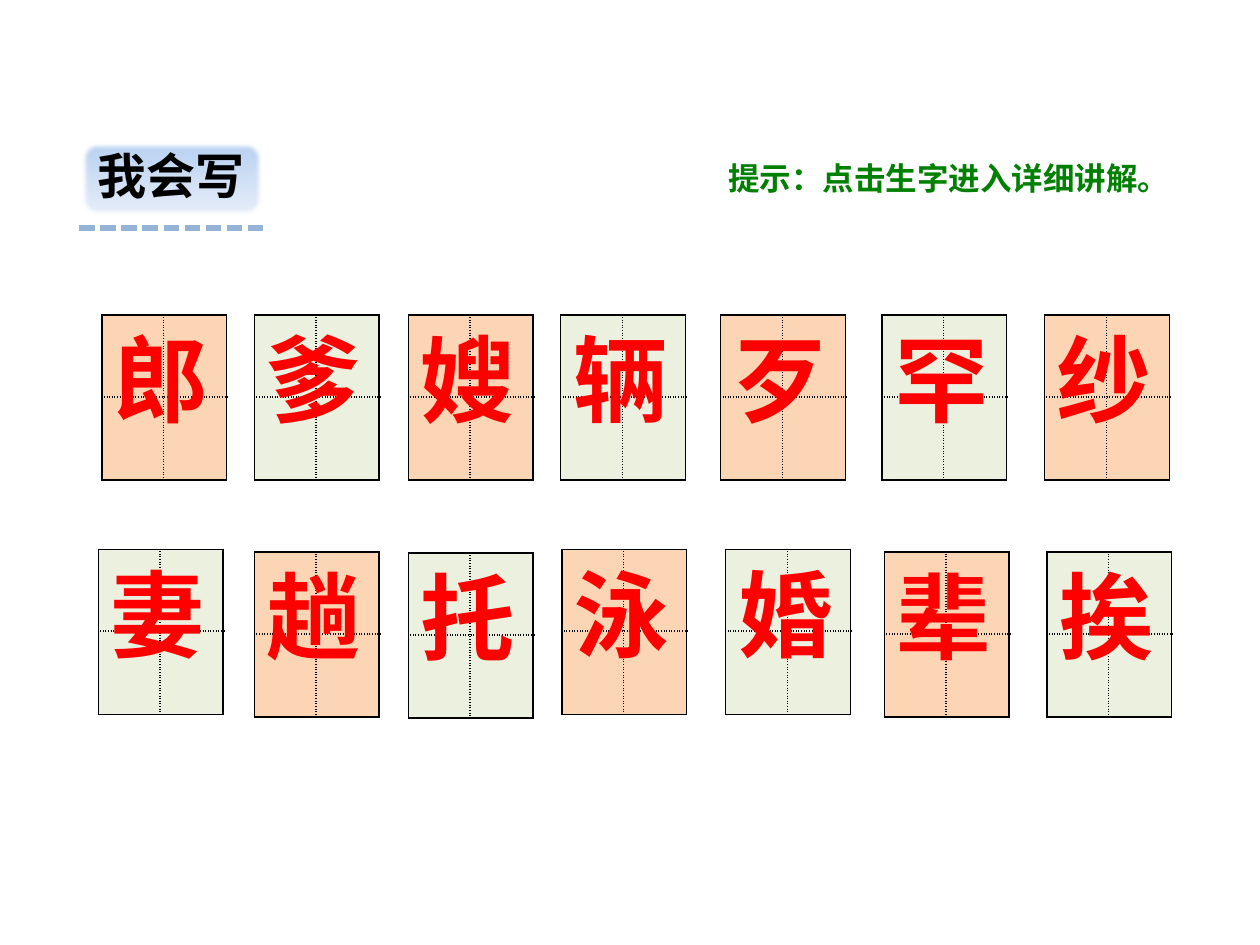
import pptx
import pptx.dml.color
import pptx.enum.dml
import pptx.enum.shapes
import pptx.enum.text
import pptx.oxml
import pptx.oxml.ns
import pptx.util

Inches = pptx.util.Inches
Pt = pptx.util.Pt

TITLE = "我会写"
HINT = [("提示", "cjk"), ("：", "latin"), ("点击生字进入详细讲解。", "cjk")]
CHARACTER_ROWS = [
    [("郎", 0.81, 2.5), ("爹", 2.02, 2.5), ("嫂", 3.24, 2.5), ("辆", 4.45, 2.5),
     ("歹", 5.72, 2.5), ("罕", 7.0, 2.5), ("纱", 8.29, 2.5)],
    [("妻", 0.78, 4.36), ("趟", 2.02, 4.38), ("托", 3.24, 4.39), ("泳", 4.46, 4.36),
     ("婚", 5.76, 4.36), ("辈", 7.02, 4.38), ("挨", 8.31, 4.38)],
]
CARD_COLUMNS = (0.49, 0.5)
CARD_ROWS = (0.65, 0.66)

THEME = {
    "cjk": "Noto Sans CJK SC", "latin": "Calibri",
    "title": "000000", "hint": "008000", "character": "FF0000",
    "outline": "FFFFFF", "border": "000000", "dash": "95B3D7",
    "cards": ("FCD5B5", "EBF1DE"),
    "badge": ("B7D0F1", "E8EFFA"),
    "title_size": 28, "hint_size": 18, "character_size": 54,
}


def color(value):
    return pptx.dml.color.RGBColor.from_string(value)


def xml(tag, attributes="", content=""):
    namespace = pptx.oxml.ns.nsdecls("a")
    return pptx.oxml.parse_xml(f"<a:{tag} {namespace} {attributes}>{content}</a:{tag}>")


def solid(value):
    return f'<a:solidFill><a:srgbClr val="{value}"/></a:solidFill>'


def format_run(run, role, face="cjk"):
    run.font.name = THEME[face]
    run.font.size = Pt(THEME[role + "_size"])
    run.font.bold = True
    run.font.color.rgb = color(THEME[role])
    run.font._element.find(pptx.oxml.ns.qn("a:latin")).addnext(
        xml("ea", f'typeface="{THEME[face]}"'))


def fit_without_wrap(text_frame):
    text_frame.word_wrap = False
    text_frame.auto_size = pptx.enum.text.MSO_AUTO_SIZE.SHAPE_TO_FIT_TEXT


def add_title(slide):
    badge = slide.shapes.add_shape(
        pptx.enum.shapes.MSO_SHAPE.ROUNDED_RECTANGLE,
        Inches(0.65), Inches(1.13), Inches(1.43), Inches(0.58))
    badge.fill.gradient()
    badge.fill.gradient_angle = 270
    for stop, value in zip(badge.fill.gradient_stops, THEME["badge"]):
        stop.color.rgb = color(value)
    for stop, position in zip(badge.fill.gradient_stops, (0, 1)):
        stop.position = position
    badge.line.fill.background()
    badge._element.spPr.append(xml("effectLst", content='<a:softEdge rad="31750"/>'))
    text_frame = badge.text_frame
    text_frame.text = TITLE
    fit_without_wrap(text_frame)
    text_frame.vertical_anchor = pptx.enum.text.MSO_ANCHOR.TOP
    paragraph = text_frame.paragraphs[0]
    paragraph.alignment = pptx.enum.text.PP_ALIGN.LEFT
    paragraph.line_spacing = 0.9
    format_run(paragraph.runs[0], "title")

    underline = slide.shapes.add_connector(
        pptx.enum.shapes.MSO_CONNECTOR.STRAIGHT,
        Inches(0.63), Inches(1.81), Inches(2.09), Inches(1.81))
    underline.line.color.rgb = color(THEME["dash"])
    underline.line.width = Pt(3)
    underline.line.dash_style = pptx.enum.dml.MSO_LINE.SQUARE_DOT
    underline.line._ln.find(pptx.oxml.ns.qn("a:prstDash")).set("val", "sysDash")
    underline._element.spPr.append(xml("effectLst"))


def add_hint(slide):
    box = slide.shapes.add_textbox(Inches(5.71), Inches(1.14), Inches(3.72), Inches(0.54))
    text_frame = box.text_frame
    text_frame.word_wrap = True
    text_frame.vertical_anchor = pptx.enum.text.MSO_ANCHOR.MIDDLE
    for side in ("left", "top", "right", "bottom"):
        setattr(text_frame, "margin_" + side, Inches(0.07))
    for text, face in HINT:
        run = text_frame.paragraphs[0].add_run()
        run.text = text
        format_run(run, "hint", face)


def format_cell(cell, row, column, fill):
    cell.fill.solid()
    cell.fill.fore_color.rgb = color(fill)
    dotted = {"lnL": column == 1, "lnR": column == 0, "lnT": row == 1, "lnB": row == 0}
    for index, (tag, is_dotted) in enumerate(dotted.items()):
        dash = "sysDot" if is_dotted else "solid"
        border = xml(tag, f'w="{Pt(1)}"',
                     solid(THEME["border"]) + f'<a:prstDash val="{dash}"/>')
        cell._tc.get_or_add_tcPr().insert(index, border)


def add_card(slide, character, left, top, fill):
    table = slide.shapes.add_table(
        2, 2, Inches(left), Inches(top),
        Inches(sum(CARD_COLUMNS)), Inches(sum(CARD_ROWS))).table
    for index in range(2):
        table.columns[index].width = Inches(CARD_COLUMNS[index])
        table.rows[index].height = Inches(CARD_ROWS[index])
    for row in range(2):
        for column in range(2):
            format_cell(table.cell(row, column), row, column, fill)

    box = slide.shapes.add_textbox(Inches(left), Inches(top), Inches(0.96), Inches(1.01))
    box.text_frame.text = character
    fit_without_wrap(box.text_frame)
    run = box.text_frame.paragraphs[0].runs[0]
    format_run(run, "character")
    run.font._element.insert(0, xml("ln", f'w="{Pt(0.75)}"', solid(THEME["outline"])))


def main():
    presentation = pptx.Presentation()
    presentation.slide_width = Inches(10)
    presentation.slide_height = Inches(7.5)
    slide = presentation.slides.add_slide(presentation.slide_layouts[6])
    add_title(slide)
    for row, cards in enumerate(CHARACTER_ROWS):
        for column, (character, left, top) in enumerate(cards):
            add_card(slide, character, left, top, THEME["cards"][(row + column) % 2])
    add_hint(slide)
    presentation.save("out.pptx")


if __name__ == "__main__":
    main()
